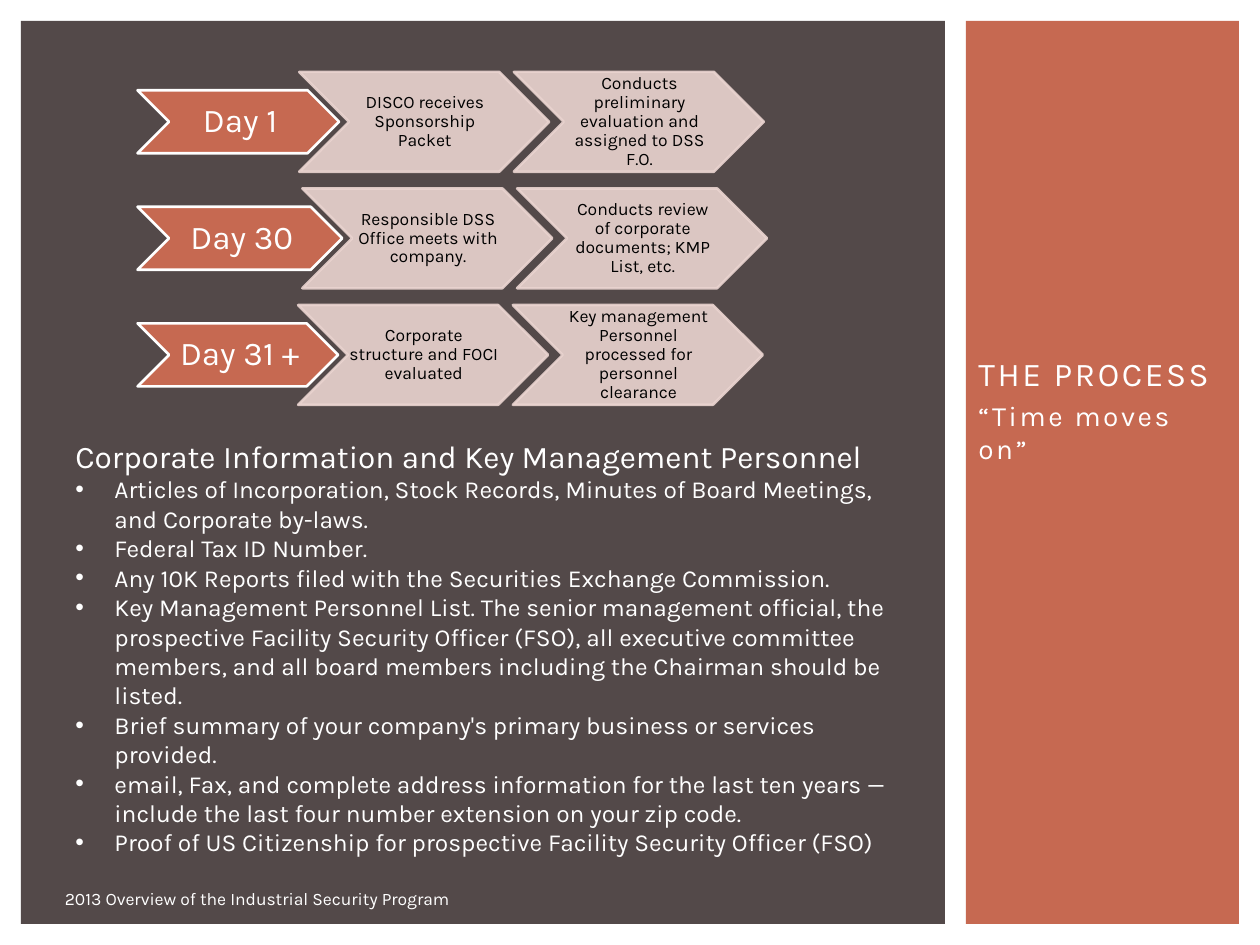
from pptx import Presentation, util as u
from pptx.dml import color
from pptx.enum import shapes, text
from pptx.oxml import xmlchemy

COLORS = {"white": "FFFFFF", "black": "000000", "rust": "C66951", "brown": "534949", "blush": "EAD4D0"}
COLUMNS, ROWS = 120, 90
STAGES = [
    ("Day 1", 19.2, ["DISCO receives Sponsorship Packet",
                     "Conducts preliminary evaluation and assigned to DSS F.O."]),
    ("Day 30", 19.5, ["Responsible DSS Office meets with company.",
                      "Conducts review of corporate documents; KMP List, etc."]),
    ("Day 31 +", 19.1, ["Corporate structure and FOCI evaluated",
                        "Key management Personnel processed for personnel clearance"]),
]
DOCUMENTS = [
    "Articles of Incorporation, Stock Records, Minutes of Board Meetings, and Corporate by-laws.",
    "Federal Tax ID Number.",
    "Any 10K Reports filed with the Securities Exchange Commission.",
    "Key Management Personnel List. The senior management official, the prospective Facility Security "
    "Officer (FSO), all executive committee members, and all board members including the Chairman should be listed.",
    "Brief summary of your company's primary business or services provided.",
    "email, Fax, and complete address information for the last ten years — "
    "include the last four number extension on your zip code.",
    "Proof of US Citizenship for prospective Facility Security Officer (FSO)",
]


class Deck:
    """Holds the style, the grid and the current slide."""

    def __init__(self, font="Karla"):
        self.font = font
        self.presentation = Presentation()
        self.presentation.slide_width, self.presentation.slide_height = u.Inches(10), u.Inches(7.5)
        self.slide = self.presentation.slides.add_slide(self.presentation.slide_layouts[6])

    def box(self, left, top, width, height):
        column = self.presentation.slide_width / COLUMNS
        row = self.presentation.slide_height / ROWS
        return [u.Emu(round(n)) for n in (left * column, top * row, width * column, height * row)]

    def format(self, target, values):
        for name, value in values.items():
            setattr(target, name, value)

    def add_xml(self, parent, tag, **attributes):
        child = xmlchemy.OxmlElement(tag)
        for name, value in attributes.items():
            child.set(name, value)
        parent.append(child)

    def shape(self, kind, place, fill, line=None, alpha=None):
        shape = self.slide.shapes.add_shape(kind, *self.box(*place))
        shape.shadow.inherit = False
        shape.fill.solid()
        shape.fill.fore_color.rgb = color.RGBColor.from_string(COLORS[fill])
        if line:
            shape.line.color.rgb = color.RGBColor.from_string(COLORS[line])
            shape.line.width = u.Pt(1.5)
        else:
            shape.line.fill.background()
        if alpha:
            for tone in shape._element.spPr.xpath(".//a:srgbClr"):
                self.add_xml(tone, "a:alpha", val=str(alpha * 1000))
        return shape

    def panel(self, place, fill):
        self.shape(shapes.MSO_SHAPE.RECTANGLE, place, fill)

    def paragraph(self, paragraph, words, size, tone="white", spacing=0, bullet=False, **values):
        self.format(paragraph, values)
        run = paragraph.add_run()
        run.text = words
        self.format(run.font, {"name": self.font, "size": u.Pt(size)})
        run.font.color.rgb = color.RGBColor.from_string(COLORS[tone])
        if spacing:
            run._r.get_or_add_rPr().set("spc", str(round(spacing * 100)))
        if bullet:
            properties = paragraph._p.get_or_add_pPr()
            indent = u.Inches(0.31)
            properties.set("marL", str(indent))
            properties.set("indent", str(-indent))
            self.add_xml(properties, "a:buFont", typeface="Arial")
            self.add_xml(properties, "a:buChar", char="•")

    def chevron(self, place, words, size, tone, fill, line, alpha=None, inset=0.01):
        frame = self.shape(shapes.MSO_SHAPE.CHEVRON, place, fill, line, alpha).text_frame
        self.format(frame, {
            "word_wrap": True, "vertical_anchor": text.MSO_ANCHOR.MIDDLE, "margin_left": u.Inches(inset),
            "margin_right": 0, "margin_top": u.Inches(0.01), "margin_bottom": u.Inches(0.01)})
        self.paragraph(frame.paragraphs[0], words, size, tone,
                       alignment=text.PP_ALIGN.CENTER, line_spacing=0.9)

    def text(self, place, paragraphs, anchor=text.MSO_ANCHOR.TOP):
        frame = self.slide.shapes.add_textbox(*self.box(*place)).text_frame
        self.format(frame, {"word_wrap": True, "vertical_anchor": anchor})
        for index, values in enumerate(paragraphs):
            self.paragraph(frame.add_paragraph() if index else frame.paragraphs[0], **values)


def main():
    deck = Deck()
    deck.panel((92, 2, 26, 86), "rust")
    deck.panel((2, 2, 88, 86), "brown")
    deck.text((5, 84, 69, 3.2), [{"words": "2013 Overview of the Industrial Security Program", "size": 10}])
    deck.text((92, 27, 26, 24), [
        {"words": "THE PROCESS", "size": 19, "spacing": 1.5, "space_before": u.Pt(4)},
        {"words": "“Time moves on”", "size": 16, "spacing": 1.5, "space_before": u.Pt(3)},
    ], text.MSO_ANCHOR.MIDDLE)
    deck.text((6, 41, 80, 38.8), [
        {"words": "Corporate Information and Key Management Personnel", "size": 18},
        *({"words": item, "size": 14, "bullet": True} for item in DOCUMENTS),
    ])

    left, first_middle, pitch = 13.1, 11.6, 11.1
    day_height, step_width, step_height = 6, 23.8, 9.5
    day_overlap, step_pitch = 3.8, 20.45
    for row, (day, day_width, steps) in enumerate(STAGES):
        middle = first_middle + row * pitch
        deck.chevron((left, middle - day_height / 2, day_width, day_height),
                     day, 19, "white", "rust", "white", inset=0.03)
        for column, step in enumerate(steps):
            step_left = left + day_width - day_overlap + column * step_pitch
            deck.chevron((step_left, middle - step_height / 2, step_width, step_height),
                         step, 10, "black", "blush", "blush", alpha=90)
    deck.presentation.save("out.pptx")


if __name__ == "__main__":
    main()
